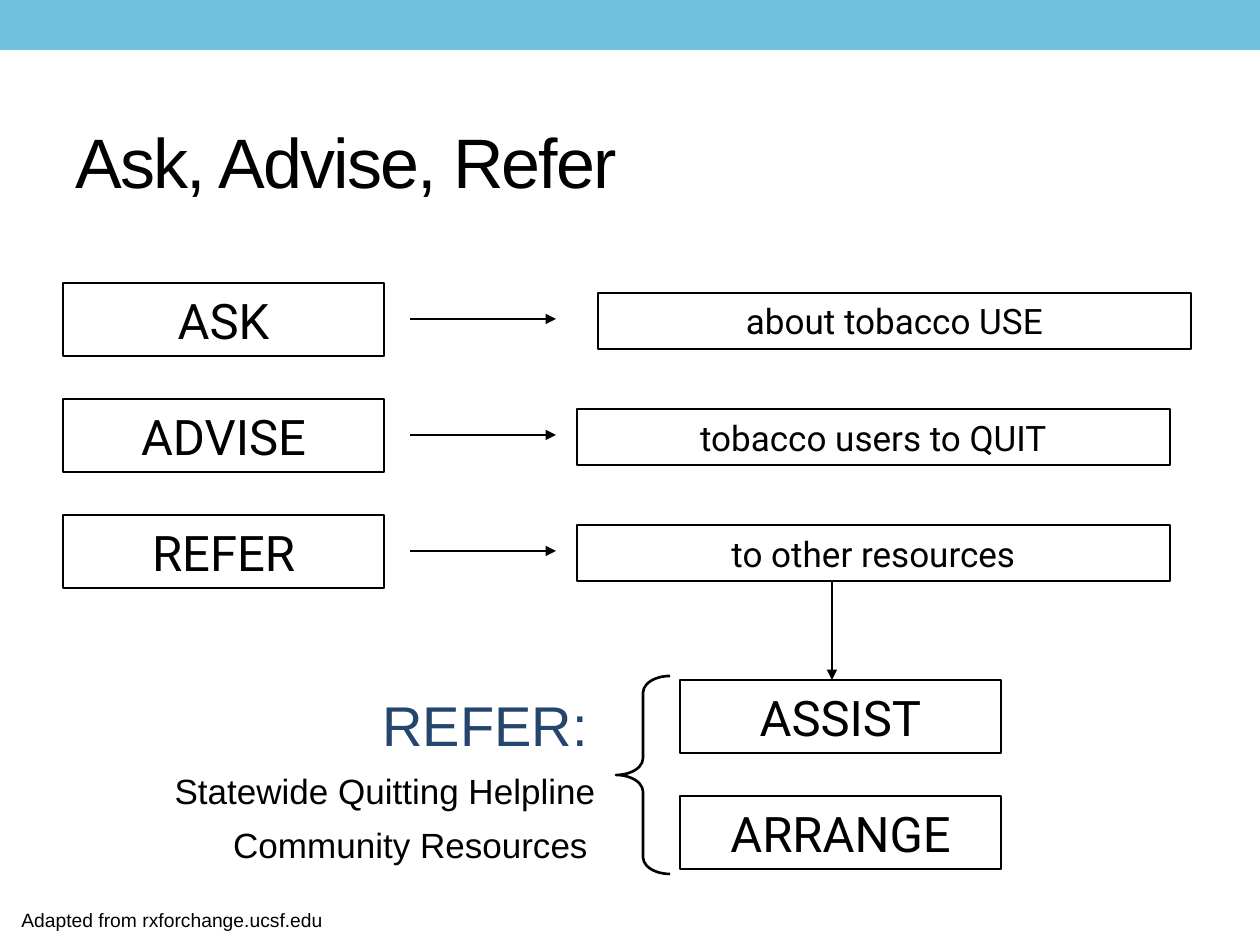
from pptx import Presentation
from pptx.dml.color import RGBColor
from pptx.enum.shapes import MSO_CONNECTOR, MSO_SHAPE
from pptx.enum.text import MSO_ANCHOR, PP_ALIGN
from pptx.oxml.ns import qn
from pptx.util import Emu, Pt
from lxml.etree import SubElement

SCALE = 914400 // 126
BLACK = RGBColor(0, 0, 0)
SKY = RGBColor(0x70, 0xC1, 0xDE)
NAVY = RGBColor(0x24, 0x45, 0x6E)


def px(num):
    return Emu(num * SCALE)


def add_run(para, text, size, font="Arial", color=BLACK):
    run = para.add_run()
    run.text = text
    run.font.size = Pt(size)
    run.font.name = font
    run.font.color.rgb = color
    return run


def add_shape(slide, kind, area, fill=None, line=None):
    shape = slide.shapes.add_shape(kind, *map(px, area))
    shape.shadow.inherit = False
    if fill is None:
        shape.fill.background()
    else:
        shape.fill.solid()
        shape.fill.fore_color.rgb = fill
    if line is None:
        shape.line.fill.background()
    else:
        shape.line.color.rgb = BLACK
        shape.line.width = Pt(line)
    return shape


def add_box(slide, area, text, size):
    shape = add_shape(slide, MSO_SHAPE.RECTANGLE, area, line=0.75)
    frame = shape.text_frame
    frame.word_wrap = True
    frame.vertical_anchor = MSO_ANCHOR.MIDDLE
    para = frame.paragraphs[0]
    para.alignment = PP_ALIGN.CENTER
    add_run(para, text, size, "Roboto")


def add_arrow(slide, x1, y1, x2, y2):
    arrow = slide.shapes.add_connector(
        MSO_CONNECTOR.STRAIGHT, px(x1), px(y1), px(x2), px(y2))
    arrow.line.color.rgb = BLACK
    arrow.line.width = Pt(0.75)
    SubElement(arrow.line._get_or_add_ln(), qn("a:tailEnd"), type="triangle")
    SubElement(arrow._element.spPr, qn("a:effectLst"))


def add_text(slide, area, anchor):
    frame = slide.shapes.add_textbox(*map(px, area)).text_frame
    frame.word_wrap = True
    frame.vertical_anchor = anchor
    return frame


def main():
    deck = Presentation()
    deck.slide_width, deck.slide_height = px(1260), px(945)
    slide = deck.slides.add_slide(deck.slide_layouts[6])

    # Top band and title
    add_shape(slide, MSO_SHAPE.RECTANGLE, (0, 0, 1260, 50), fill=SKY)
    title = add_text(slide, (63, 73, 1134, 136), MSO_ANCHOR.BOTTOM)
    run = add_run(title.paragraphs[0], "Ask, Advise, Refer", 40)
    run.font._element.set("spc", "-100")

    # Three steps, each with its arrow and meaning
    steps = [("ASK", "about tobacco USE", 598),
             ("ADVISE", "tobacco users to QUIT", 577),
             ("REFER", "to other resources", 577)]
    for row, (step, note, left) in enumerate(steps):
        top = 283 + 116 * row
        add_box(slide, (63, top, 321, 73), step, 28)
        add_arrow(slide, 410, top + 36, 556, top + 36)
        add_box(slide, (left, top + 10, 593, 56), note, 20)

    # What the other resources do
    for row, step in enumerate(["ASSIST", "ARRANGE"]):
        add_box(slide, (680, 680 + 116 * row, 321, 73), step, 28)
    add_arrow(slide, 832, 581, 832, 680)
    brace = add_shape(slide, MSO_SHAPE.LEFT_BRACE, (616, 676, 54, 198),
                      line=1.5)
    brace.adjustments[0] = 0.31

    # Referral list
    refer = add_text(slide, (84, 683, 524, 190), MSO_ANCHOR.MIDDLE)
    lines = [[("REFER:", 32, NAVY), (" ", 16, BLACK)],
             [("Statewide Quitting Helpline", 20, BLACK)],
             [("Community Resources", 20, BLACK), (" ", 16, BLACK)]]
    for num, line in enumerate(lines):
        para = refer.add_paragraph() if num else refer.paragraphs[0]
        para.alignment = PP_ALIGN.RIGHT
        if num:
            para.space_before = Pt(7)
        for text, size, color in line:
            add_run(para, text, size, color=color)

    # Source line
    credit = add_text(slide, (9, 902, 338, 36), MSO_ANCHOR.TOP)
    add_run(credit.paragraphs[0], "Adapted from rxforchange.ucsf.edu", 11)

    deck.save("out.pptx")


if __name__ == "__main__":
    main()
